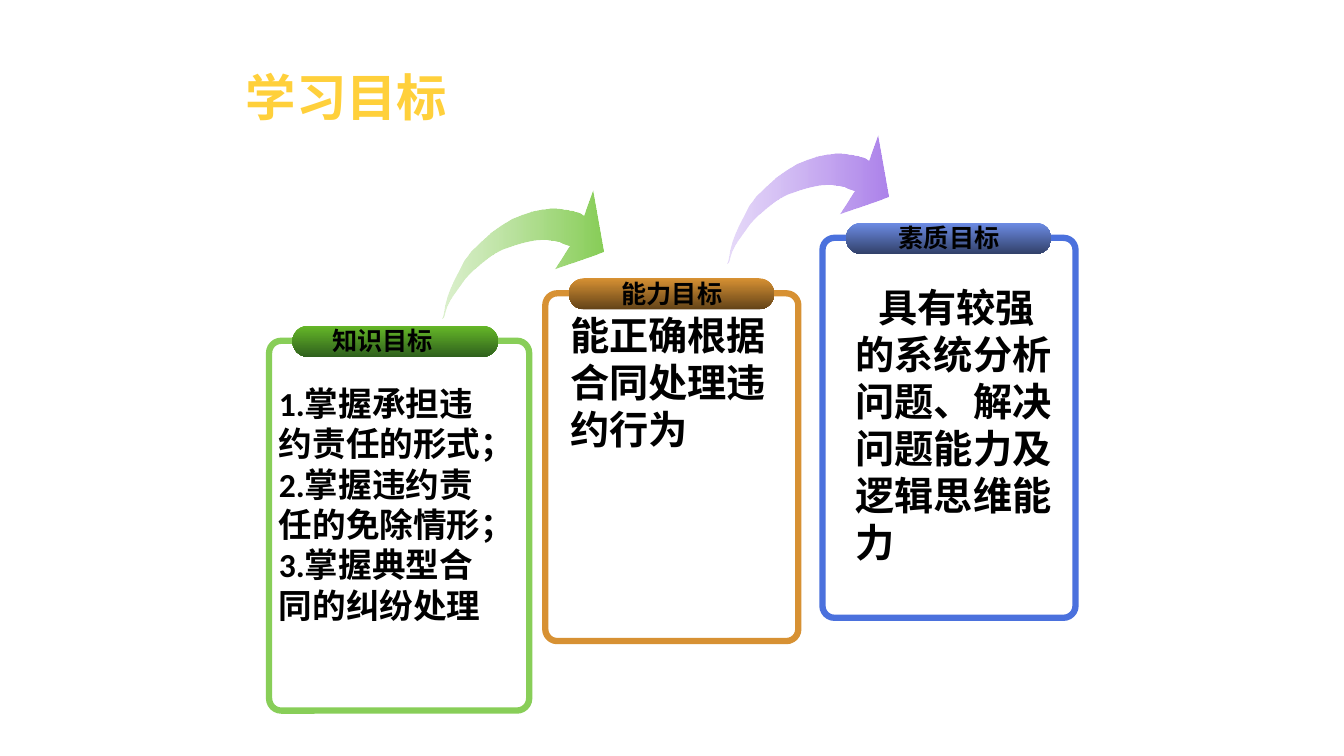
"""Build the learning objectives slide: three rising cards joined by curved arrows."""
import dataclasses

import lxml.etree
import pptx
import pptx.dml.color
import pptx.enum.shapes
import pptx.enum.text
import pptx.oxml.ns
import pptx.util

Pt = pptx.util.Pt
SHAPE = pptx.enum.shapes.MSO_SHAPE
ALIGN = pptx.enum.text.PP_ALIGN
ANCHOR = pptx.enum.text.MSO_ANCHOR
AUTO_SIZE = pptx.enum.text.MSO_AUTO_SIZE
qn = pptx.oxml.ns.qn


@dataclasses.dataclass(frozen=True)
class Theme:
    latin: str = "Calibri"
    asian: str = "Noto Sans CJK SC"
    title_color: str = "FFD03B"
    text_color: str = "000000"
    title_size: int = 36
    label_size: int = 18
    list_size: int = 24
    body_size: int = 28
    border: float = 4.5


@dataclasses.dataclass(frozen=True)
class Card:
    label: str
    body: str
    frame: tuple
    label_left: float
    body_box: tuple
    body_size: int
    border_color: str
    pill_colors: tuple
    indent: float = 0


THEME = Theme()

CARDS = (
    Card("知识目标", "1.掌握承担违约责任的形式；2.掌握违约责任的免除情形；3.掌握典型合同的纠纷处理",
         (192.2, 243.4, 185.8, 264.2), 229.7, (192.2, 270, 163.4, 180),
         THEME.list_size, "88CE58", ("66B828", "2F611D")),
    Card("能力目标", "能正确根据合同处理违约行为",
         (389.5, 209.5, 180.7, 248.4), 436.3, (400.3, 218.9, 163.4, 108),
         THEME.body_size, "D79133", ("D79133", "634318")),
    Card("素质目标", "具有较强的系统分析问题、解决问题能力及逻辑思维能力",
         (587.5, 169.9, 180.7, 271.4), 634.3, (604.1, 198.7, 163.4, 242.6),
         THEME.body_size, "4B71DD", ("6D8CE5", "32416A"), 16.3),
)

ARROWS = (
    (316.1, 136.1, ("93D267", "88CE58")),
    (519.8, 96.5, ("B48EED", "AD83EB")),
)
ARROW_UNIT = 0.72
ARROW_OUTLINE = (
    (0, 127), (1, 126), (2, 124), (3, 120), (5, 114), (8, 108), (13, 101),
    (18, 94), (23, 87), (31, 79), (39, 72), (48, 65), (59, 59), (70, 55),
    (80, 52), (89, 50), (97, 49), (104, 49), (111, 50), (116, 51), (120, 53),
    (123, 54), (126, 55), (111, 78), (160, 61), (149, 0), (140, 25), (137, 23),
    (135, 22), (131, 21), (126, 20), (120, 19), (113, 18), (106, 18), (98, 19),
    (88, 21), (79, 24), (69, 28), (58, 35), (48, 42), (38, 51), (29, 60),
    (22, 69), (17, 79), (12, 88), (8, 97), (5, 105), (3, 112), (2, 118), (1, 123),
)


def rgb(code):
    """Return the colour for a hexadecimal code."""
    return pptx.dml.color.RGBColor.from_string(code)


def fill_gradient(shape, colors, angle, start_alpha=None):
    """Fill a borderless shape with a gradient of two colours."""
    shape.shadow.inherit = False
    shape.line.fill.background()
    shape.fill.gradient()
    shape.fill.gradient_angle = angle
    for stop, color in zip(shape.fill.gradient_stops, colors):
        stop.color.rgb = rgb(color)
    if start_alpha is not None:
        start = next(shape._element.spPr.iter(qn("a:srgbClr")))
        lxml.etree.SubElement(start, qn("a:alpha")).set("val", str(start_alpha * 1000))


def add_rounded(page, box, radius):
    """Add a rounded rectangle at a place given in points."""
    shape = page.shapes.add_shape(SHAPE.ROUNDED_RECTANGLE, *map(Pt, box))
    shape.adjustments[0] = radius
    shape.shadow.inherit = False
    return shape


def add_frame(page, card):
    """Add the outline of a card and the pill on its top edge."""
    outline = add_rounded(page, card.frame, 0.047)
    outline.fill.background()
    outline.line.color.rgb = rgb(card.border_color)
    outline.line.width = Pt(THEME.border)
    left, top = card.frame[:2]
    pill = add_rounded(page, (left + 16.7, top - 10.8, 146.9, 22.3), 0.5)
    fill_gradient(pill, card.pill_colors, 270)


def add_arrow(page, left, top, colors):
    """Add a curved arrow that fades in from its tail."""
    first, *rest = ARROW_OUTLINE
    builder = page.shapes.build_freeform(*first, scale=Pt(ARROW_UNIT))
    builder.add_line_segments(rest, close=True)
    arrow = builder.convert_to_shape(Pt(left), Pt(top))
    fill_gradient(arrow, colors, 0, start_alpha=32)


def add_text(page, box, text, size, color=THEME.text_color, latin=THEME.latin, wrap=True):
    """Add a bold one-paragraph text box and return its frame."""
    frame = page.shapes.add_textbox(*map(Pt, box)).text_frame
    frame.word_wrap = wrap
    frame.auto_size = AUTO_SIZE.SHAPE_TO_FIT_TEXT
    frame.text = text
    span = frame.paragraphs[0].runs[0]
    span.font.size = Pt(size)
    span.font.bold = True
    span.font.color.rgb = rgb(color)
    span.font.name = latin
    asian = lxml.etree.Element(qn("a:ea"))
    asian.set("typeface", THEME.asian)
    span._r.rPr.find(qn("a:latin")).addnext(asian)
    return frame


def add_title(page):
    """Add the slide title."""
    frame = add_text(page, (168.5, 46.1, 623.5, 51.1), "学习目标", THEME.title_size,
                     THEME.title_color, THEME.asian)
    frame.auto_size = AUTO_SIZE.NONE
    frame.vertical_anchor = ANCHOR.MIDDLE
    frame.paragraphs[0].line_spacing = 0.9


def add_label(page, card):
    """Add the heading of a card."""
    box = (card.label_left, card.frame[1] - 14.4, 87.1, 28.8)
    frame = add_text(page, box, card.label, THEME.label_size, wrap=False)
    frame.paragraphs[0].alignment = ALIGN.CENTER


def add_body(page, card):
    """Add the body text of a card."""
    para = add_text(page, card.body_box, card.body, card.body_size).paragraphs[0]
    if card.indent:
        para._p.get_or_add_pPr().set("indent", str(Pt(card.indent)))


def main():
    """Build and save the deck."""
    deck = pptx.Presentation()
    deck.slide_width, deck.slide_height = Pt(960), Pt(540)
    page = deck.slides.add_slide(deck.slide_layouts[6])
    add_title(page)
    for card in CARDS:
        add_frame(page, card)
    for arrow in ARROWS:
        add_arrow(page, *arrow)
    for card in CARDS:
        add_label(page, card)
    for card in CARDS:
        add_body(page, card)
    deck.save("out.pptx")


if __name__ == "__main__":
    main()
